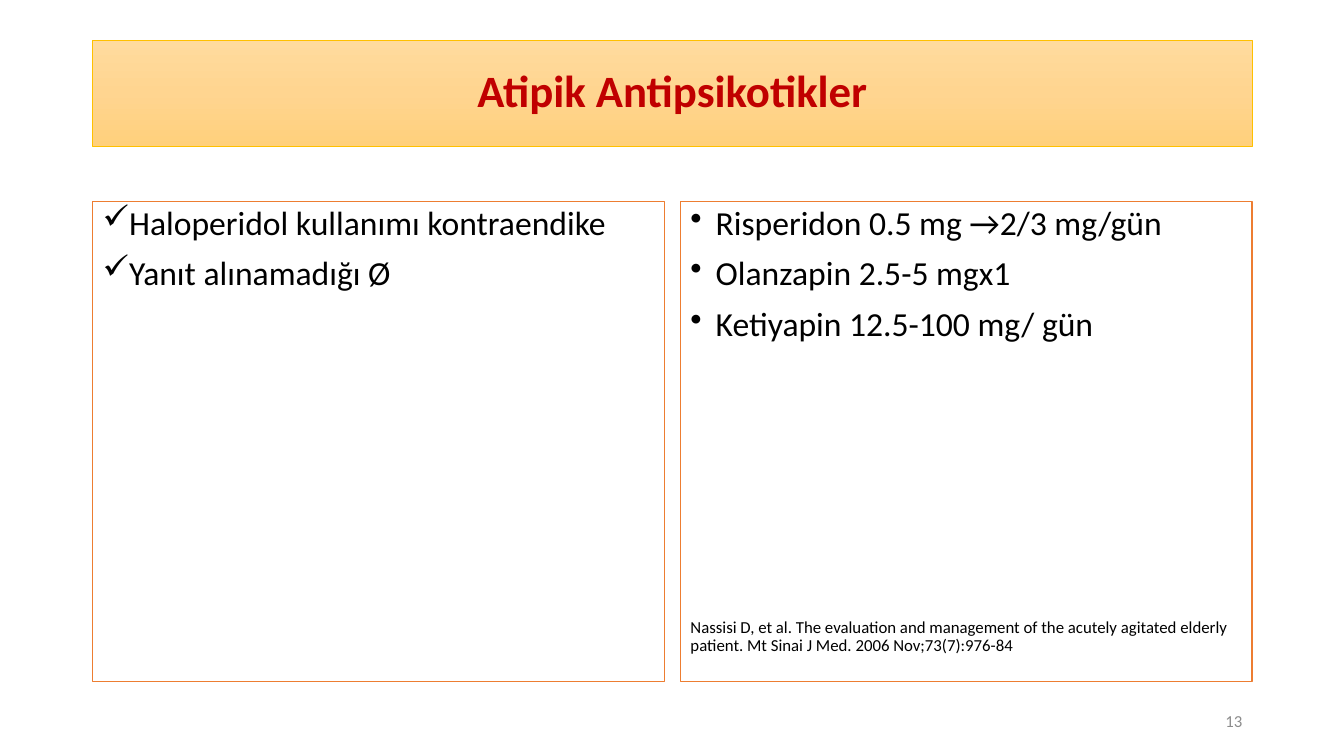
from copy import deepcopy
from dataclasses import dataclass

from pptx import Presentation
from pptx.dml.color import RGBColor
from pptx.enum.shapes import MSO_SHAPE as Preset
from pptx.enum.text import MSO_ANCHOR as Anchor, PP_ALIGN as Align
from pptx.oxml.ns import qn
from pptx.util import Inches, Pt

FONT = "Calibri"
BULLET_INDENT = Inches(0.25)
MARGIN, PANEL_TOP = 0.92, 2
PANEL_WIDTH, PANEL_HEIGHT, PANEL_GAP = 5.67, 4.76, 0.16
TITLE_GRADIENT = ["FFDB9E", "FFD590", "FFD07C"]


@dataclass
class Panel:
    bullet: str
    items: list[str]
    citation: str = ""


PANELS = [
    Panel("✓", ["Haloperidol kullanımı kontraendike", "Yanıt alınamadığı Ø"]),
    Panel(
        "•",
        ["Risperidon 0.5 mg →2/3 mg/gün", "Olanzapin 2.5-5 mgx1", "Ketiyapin 12.5-100 mg/ gün"],
        "Nassisi D, et al. The evaluation and management of the acutely agitated "
        "elderly patient. Mt Sinai J Med. 2006 Nov;73(7):976-84",
    ),
]


def rgb(hex_color: str) -> RGBColor:
    return RGBColor.from_string(hex_color)


def write(paragraph, text: str, *, size: float, color: str = "000000", bold: bool = False,
          align=Align.LEFT, line_spacing: float = 0.9, before: float = 0, bullet: str = "") -> None:
    paragraph.alignment = align
    paragraph.line_spacing = line_spacing
    paragraph.space_before = Pt(before)
    run = paragraph.add_run()
    run.text = text
    run.font.name, run.font.size, run.font.bold = FONT, Pt(size), bold
    run.font.color.rgb = rgb(color)
    if bullet:
        properties = paragraph._p.get_or_add_pPr()
        properties.set("marL", str(BULLET_INDENT))
        properties.set("indent", str(-BULLET_INDENT))
        mark = properties.makeelement(qn("a:buChar"), {"char": bullet})
        properties.append(mark)


def add_box(slide, left: float, top: float, width: float, height: float, *,
            line: str, line_width: float, anchor):
    box = slide.shapes.add_shape(
        Preset.RECTANGLE, Inches(left), Inches(top), Inches(width), Inches(height))
    box.shadow.inherit = False
    box.line.color.rgb = rgb(line)
    box.line.width = Pt(line_width)
    box.text_frame.word_wrap = True
    box.text_frame.vertical_anchor = anchor
    return box


def fill_gradient(shape, colors: list[str]) -> None:
    """Fill from top to bottom with evenly spaced colours."""
    shape.fill.gradient()
    shape.fill.gradient_angle = 270
    stops = shape._element.spPr.find(qn("a:gradFill")).find(qn("a:gsLst"))
    while len(stops) < len(colors):
        stops.append(deepcopy(stops[0]))
    for index, (stop, color) in enumerate(zip(shape.fill.gradient_stops, colors)):
        stop.position = index / (len(colors) - 1)
        stop.color.rgb = rgb(color)


def add_panel(slide, left: float, panel: Panel) -> None:
    box = add_box(slide, left, PANEL_TOP, PANEL_WIDTH, PANEL_HEIGHT,
                  line="ED7D31", line_width=1, anchor=Anchor.TOP)
    box.fill.solid()
    box.fill.fore_color.rgb = rgb("FFFFFF")
    frame = box.text_frame
    for index, item in enumerate(panel.items):
        paragraph = frame.add_paragraph() if index else frame.paragraphs[0]
        write(paragraph, item, size=24, before=10, bullet=panel.bullet)
    if panel.citation:
        write(frame.add_paragraph(), panel.citation, size=12, before=197)


def main() -> None:
    deck = Presentation()
    deck.slide_width, deck.slide_height = Inches(13.33), Inches(7.5)
    slide = deck.slides.add_slide(deck.slide_layouts[6])

    # Title band
    title = add_box(slide, MARGIN, 0.4, 2 * PANEL_WIDTH + PANEL_GAP, 1.05,
                    line="FFC000", line_width=0.5, anchor=Anchor.MIDDLE)
    fill_gradient(title, TITLE_GRADIENT)
    write(title.text_frame.paragraphs[0], "Atipik Antipsikotikler",
          size=32, color="C00000", bold=True, align=Align.CENTER)

    # Indications and doses
    for column, panel in enumerate(PANELS):
        add_panel(slide, MARGIN + column * (PANEL_WIDTH + PANEL_GAP), panel)

    # Page number
    page_number = slide.shapes.add_textbox(Inches(9.42), Inches(6.95), Inches(3), Inches(0.4))
    page_number.text_frame.word_wrap = True
    page_number.text_frame.vertical_anchor = Anchor.MIDDLE
    write(page_number.text_frame.paragraphs[0], "13",
          size=12, color="8C8C8C", align=Align.RIGHT, line_spacing=1.0)

    deck.save("out.pptx")


if __name__ == "__main__":
    main()
